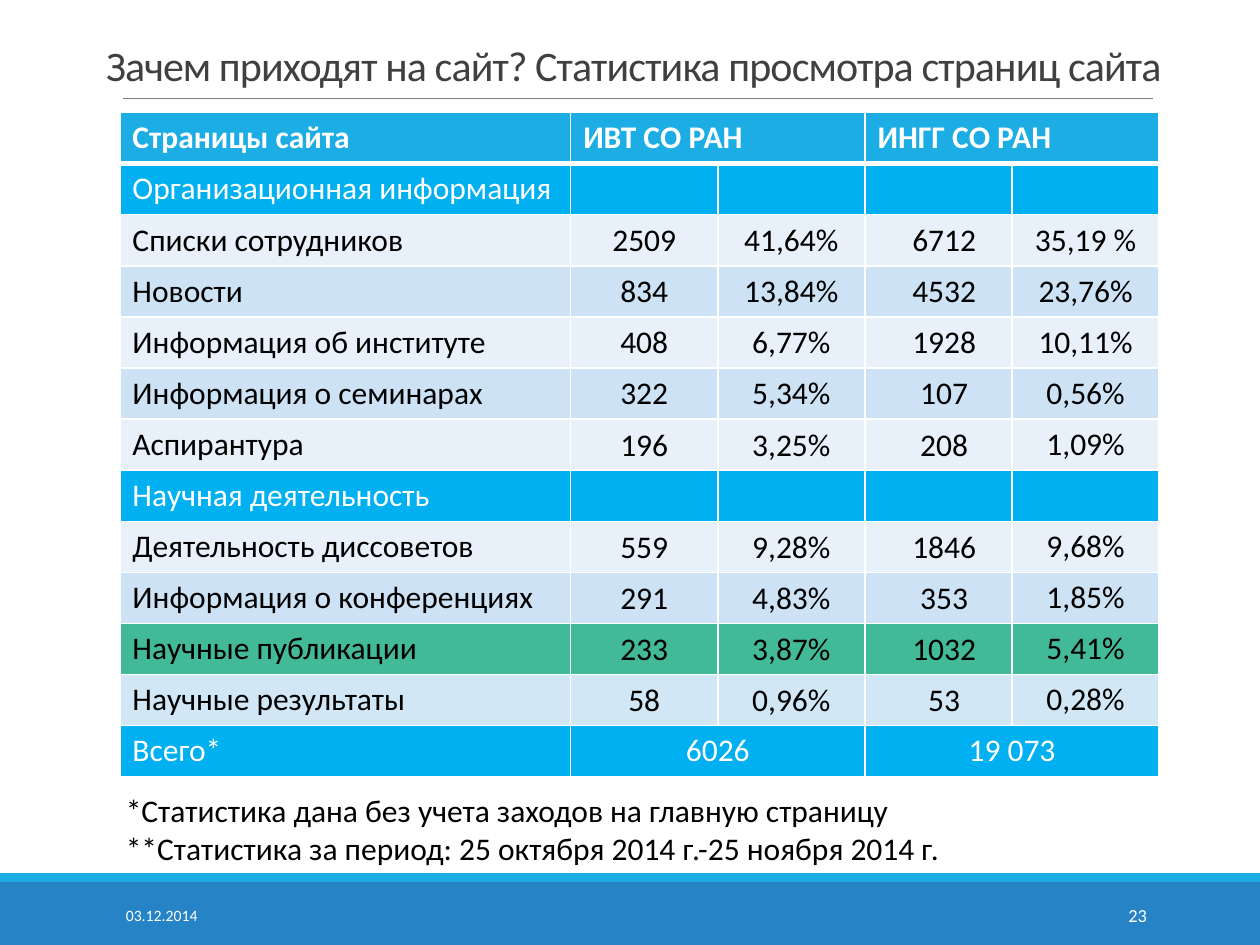
from lxml import etree
from pptx import Presentation
from pptx.dml.color import RGBColor
from pptx.enum.shapes import MSO_CONNECTOR, MSO_SHAPE
from pptx.enum.text import MSO_ANCHOR, MSO_AUTO_SIZE, PP_ALIGN
from pptx.oxml.ns import qn
from pptx.util import Pt

LEFT, CENTER, RIGHT = PP_ALIGN.LEFT, PP_ALIGN.CENTER, PP_ALIGN.RIGHT
TOP, MIDDLE, BOTTOM = MSO_ANCHOR.TOP, MSO_ANCHOR.MIDDLE, MSO_ANCHOR.BOTTOM
RECT, LINE = MSO_SHAPE.RECTANGLE, MSO_CONNECTOR.STRAIGHT
FIT = MSO_AUTO_SIZE.SHAPE_TO_FIT_TEXT

COLORS = {
    "white": "FFFFFF", "black": "000000", "title": "404040", "rule": "808080",
    "foot": "2683C6", "head": "1CADE4", "group": "00B0F0", "light": "E8F1FA",
    "band": "CDE3F5", "green": "42BA97", "pale": "D1E7F6",
}
ROWS = [
    ("head", "Страницы сайта", "ИВТ СО РАН", "", "ИНГГ СО РАН", ""),
    ("group", "Организационная информация", "", "", "", ""),
    ("light", "Списки сотрудников", "2509", "41,64%", "6712", "35,19 %"),
    ("band", "Новости", "834", "13,84%", "4532", "23,76%"),
    ("light", "Информация об институте", "408", "6,77%", "1928", "10,11%"),
    ("band", "Информация о семинарах", "322", "5,34%", "107", "0,56%"),
    ("light", "Аспирантура", "196", "3,25%", "208", "1,09%"),
    ("group", "Научная деятельность", "", "", "", ""),
    ("light", "Деятельность диссоветов", "559", "9,28%", "1846", "9,68%"),
    ("band", "Информация о конференциях", "291", "4,83%", "353", "1,85%"),
    ("green", "Научные публикации", "233", "3,87%", "1032", "5,41%"),
    ("pale", "Научные результаты", "58", "0,96%", "53", "0,28%"),
    ("group", "Всего*", "6026", "", "19 073", ""),
]
NOTES = ("*Статистика дана без учета заходов на главную страницу\n"
         "**Статистика за период: 25 октября 2014 г.-25 ноября 2014 г.")


def rgb(name):
    return RGBColor.from_string(COLORS[name])


def style(frame, size, color, align=LEFT, bold=False):
    for para in frame.paragraphs:
        para.alignment = align
        for run in para.runs:
            font = run.font
            font.name, font.size, font.bold = "Calibri", Pt(size), bold
            font.color.rgb = rgb(color)


prs = Presentation()
prs.slide_width, prs.slide_height = Pt(720), Pt(540)
slide = prs.slides.add_slide(prs.slide_layouts[5])
shapes = slide.shapes

for top, height, color in [(504, 36, "foot"), (499, 5, "head")]:
    bar = shapes.add_shape(RECT, 0, Pt(top), Pt(720), Pt(height))
    bar.shadow.inherit = False
    bar.fill.solid()
    bar.fill.fore_color.rgb = rgb(color)
    bar.line.fill.background()

rule = shapes.add_connector(LINE, Pt(70.5), Pt(56), Pt(659), Pt(56))
rule.line.color.rgb = rgb("rule")
rule.line.width = Pt(0.5)
etree.SubElement(rule._element.spPr, qn("a:effectLst"))

title = shapes.title
title.left, title.top, title.width, title.height = Pt(10), Pt(22.3), Pt(704), Pt(33)
frame = title.text_frame
frame.text = "Зачем приходят на сайт? Статистика просмотра страниц сайта"
frame.vertical_anchor = BOTTOM
frame.word_wrap = True
frame.auto_size = MSO_AUTO_SIZE.NONE
frame.paragraphs[0].line_spacing = 0.85
style(frame, 24, "title", CENTER)
frame.paragraphs[0].runs[0].font._element.set("spc", "-50")

table = shapes.add_table(len(ROWS), 5, Pt(68.5), Pt(64.3), Pt(594), Pt(379.6)).table
for col, width in zip(table.columns, [257.6] + [84.1] * 4):
    col.width = Pt(width)
for row in table.rows:
    row.height = Pt(29.2)
last = len(ROWS) - 1
for r in (0, last):
    for c in (1, 3):
        table.cell(r, c).merge(table.cell(r, c + 1))

for r, (color, *texts) in enumerate(ROWS):
    strong = color in ("head", "group")
    for c, text in enumerate(texts):
        cell = table.cell(r, c)
        cell.text = text
        cell.fill.solid()
        cell.fill.fore_color.rgb = rgb(color)
        style(cell.text_frame, 18, "white" if strong else "black",
              LEFT if c == 0 or r == 0 else CENTER, r == 0)
        if not strong and 0 < c < 4:
            cell.vertical_anchor = MIDDLE
            cell.margin_left = cell.margin_right = cell.margin_top = Pt(0.7)
            cell.margin_bottom = 0
            if c == 3:
                props = cell.text_frame.paragraphs[0]._p.get_or_add_pPr()
                props.set("indent", str(Pt(6.5)))
        tcpr = cell._tc.get_or_add_tcPr()
        for i, side in enumerate(("lnL", "lnR", "lnT", "lnB")):
            thick = (r, side) in ((0, "lnB"), (1, "lnT"))
            edge = etree.Element(qn("a:" + side), w=str(Pt(3 if thick else 1)))
            fill = etree.SubElement(edge, qn("a:solidFill"))
            etree.SubElement(fill, qn("a:srgbClr"), val=COLORS["white"])
            tcpr.insert(i, edge)

for text, left, top, width, height, size, color, align, anchor in [
    ("03.12.2014", 64.8, 508.5, 146, 28.8, 9, "white", LEFT, MIDDLE),
    ("23", 584.6, 508.5, 77.8, 28.8, 10.5, "white", RIGHT, MIDDLE),
    (NOTES, 64.8, 448.6, 481.7, 50.9, 18, "black", LEFT, TOP),
]:
    box = shapes.add_textbox(Pt(left), Pt(top), Pt(width), Pt(height))
    frame = box.text_frame
    frame.text = text
    frame.vertical_anchor = anchor
    frame.word_wrap = text != NOTES
    if text == NOTES:
        frame.auto_size = FIT
    style(frame, size, color, align)

prs.save("out.pptx")
